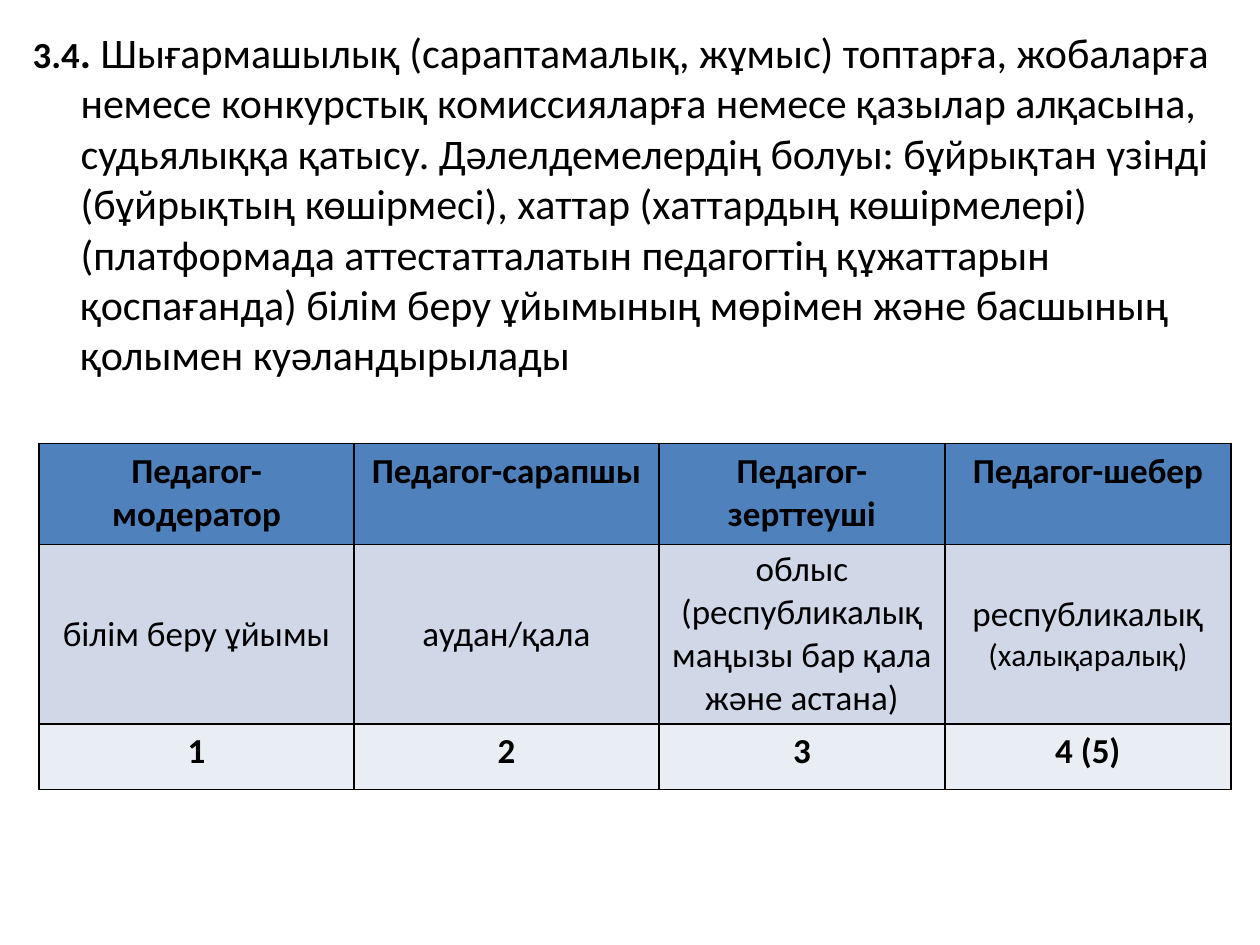
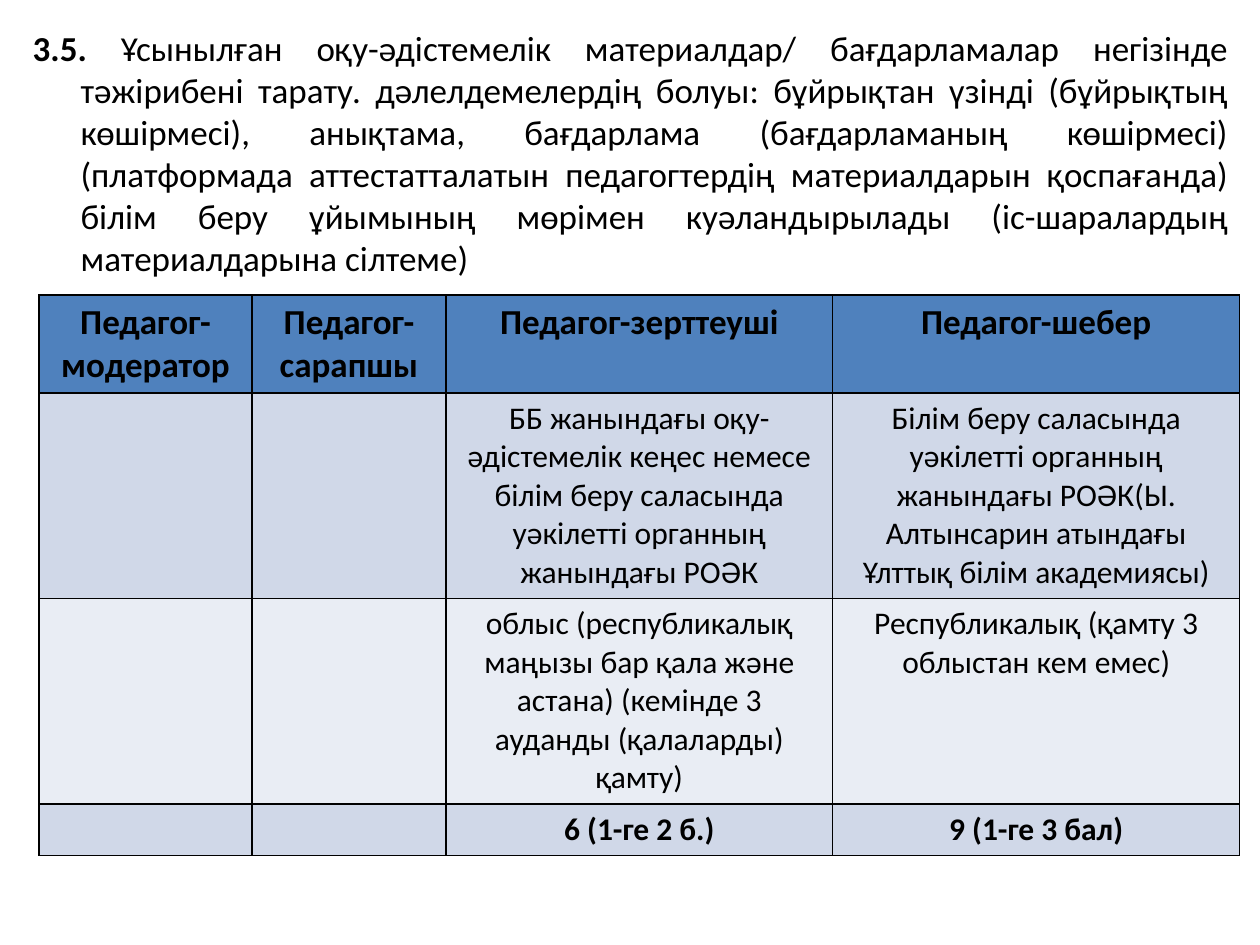
from dataclasses import dataclass
from lxml.etree import SubElement
from pptx import Presentation
from pptx.dml.color import RGBColor
from pptx.enum.text import MSO_ANCHOR as Anchor, MSO_AUTO_SIZE as AutoSize, PP_ALIGN as Align
from pptx.oxml.ns import qn
from pptx.util import Inches, Pt


@dataclass(frozen=True)
class Theme:
    font: str = "Calibri"
    ink: str = "000000"
    paper: str = "FFFFFF"
    header: str = "4F81BD"
    bands: tuple = ("D0D8E8", "E9EDF4")
    lead: int = 24
    number: int = 21
    text: int = 20
    small: int = 18
    border: int = 1


theme = Theme()
deck = Presentation()
deck.slide_width, deck.slide_height = Inches(10), Inches(7.5)
across, down = deck.slide_width / 100, deck.slide_height / 100

ranks = ["Педагог-модератор", "Педагог-сарапшы", "Педагог-зерттеуші", "Педагог-шебер"]

criteria = [
    dict(
        align=Align.LEFT,
        size=theme.lead,
        number=[("3.4", theme.number), (". ", theme.lead)],
        text="Шығармашылық (сараптамалық, жұмыс) топтарға, жобаларға немесе конкурстық "
             "комиссияларға немесе қазылар алқасына, судьялыққа қатысу. Дәлелдемелердің болуы: "
             "бұйрықтан үзінді (бұйрықтың көшірмесі), хаттар (хаттардың көшірмелері) (платформада "
             "аттестатталатын педагогтің құжаттарын қоспағанда) білім беру ұйымының мөрімен және "
             "басшының қолымен куәландырылады",
        top=46.93,
        columns=[25, 24.2, 22.7, 22.7],
        rows=[10.67, 19, 6.93],
        row_sizes=[theme.text, theme.text, theme.text],
        compact_row=1,
        cells=[
            ["білім беру ұйымы", "аудан/қала",
             "облыс (республикалық маңызы бар қала және астана)",
             ("республикалық", " (халықаралық)")],
            ["1", "2", "3", "4 (5)"],
        ],
    ),
    dict(
        align=Align.JUSTIFY,
        size=theme.text,
        number=[("3.5. ", theme.text)],
        text="Ұсынылған оқу-әдістемелік материалдар/ бағдарламалар негізінде тәжірибені тарату. "
             "дәлелдемелердің болуы: бұйрықтан үзінді (бұйрықтың көшірмесі), анықтама, бағдарлама "
             "(бағдарламаның көшірмесі) (платформада аттестатталатын педагогтердің материалдарын "
             "қоспағанда) білім беру ұйымының мөрімен куәландырылады (іс-шаралардың "
             "материалдарына сілтеме)",
        top=31.2,
        columns=[16.9, 15.4, 30.7, 32.3],
        rows=[10.4, 21.73, 21.73, 5.47],
        row_sizes=[theme.text, theme.small, theme.small, theme.small],
        compact_row=3,
        cells=[
            ["", "",
             "ББ жанындағы оқу-әдістемелік кеңес немесе білім беру саласында уәкілетті органның "
             "жанындағы РОӘК",
             "Білім беру саласында уәкілетті органның жанындағы РОӘК(Ы. Алтынсарин атындағы "
             "Ұлттық білім академиясы)"],
            ["", "",
             "облыс (республикалық маңызы бар қала және астана) (кемінде 3 ауданды (қалаларды) "
             "қамту)",
             "Республикалық (қамту 3 облыстан кем емес)"],
            ["", "", "6 (1-ге 2 б.)", "9 (1-ге 3 бал)"],
        ],
    ),
]


def style(font, size, bold):
    font.name, font.size, font.bold = theme.font, Pt(size), bold
    font.color.rgb = RGBColor.from_string(theme.ink)


def outline(cell):
    properties = cell._tc.get_or_add_tcPr()
    for position, side in enumerate(("a:lnL", "a:lnR", "a:lnT", "a:lnB")):
        line = properties.makeelement(qn(side), {"w": str(Pt(theme.border))})
        properties.insert(position, line)
        SubElement(SubElement(line, qn("a:solidFill")), qn("a:srgbClr"), val=theme.ink)


for criterion in criteria:
    page = deck.slides.add_slide(deck.slide_layouts[1])
    page.background.fill.solid()
    page.background.fill.fore_color.rgb = RGBColor.from_string(theme.paper)
    title = page.shapes.title.element
    title.getparent().remove(title)

    body = page.placeholders[1]
    body.left, body.top = int(1.6 * across), int(2.13 * down)
    body.width, body.height = int(96.9 * across), int(94.8 * down)
    body.text_frame.auto_size = AutoSize.NONE
    para = body.text_frame.paragraphs[0]
    para.alignment = criterion["align"]
    indent = para._p.get_or_add_pPr()
    indent.set("marL", str(Inches(0.38)))
    indent.set("indent", str(-Inches(0.38)))
    SubElement(indent, qn("a:buNone"))
    pieces = [(words, size, True) for words, size in criterion["number"]]
    for words, size, bold in pieces + [(criterion["text"], criterion["size"], False)]:
        span = para.add_run()
        span.text = words
        style(span.font, size, bold)

    columns, rows = criterion["columns"], criterion["rows"]
    table = page.shapes.add_table(
        len(rows), len(columns), int(3.1 * across), int(criterion["top"] * down),
        int(sum(columns) * across), int(sum(rows) * down)).table
    table.first_row = table.horz_banding = False
    for column, share in zip(table.columns, columns):
        column.width = int(share * across)
    for row, share in zip(table.rows, rows):
        row.height = int(share * down)

    for index, texts in enumerate([ranks] + criterion["cells"]):
        band = theme.bands[(index - 1) % 2] if index else theme.header
        bold = index in (0, len(rows) - 1)
        for cell, words in zip(table.rows[index].cells, texts):
            cell.fill.solid()
            cell.fill.fore_color.rgb = RGBColor.from_string(band)
            outline(cell)
            para = cell.text_frame.paragraphs[0]
            para.alignment = Align.CENTER
            style(para.font, criterion["row_sizes"][index], bold)
            if index == criterion["compact_row"] and words:
                cell.vertical_anchor = Anchor.MIDDLE
                cell.margin_left = cell.margin_right = Inches(0.05)
                cell.margin_top = cell.margin_bottom = Inches(0.03)
            if isinstance(words, tuple):
                for part, size in zip(words, (theme.text, theme.small)):
                    span = para.add_run()
                    span.text = part
                    span.font.size = Pt(size)
            elif words:
                para.add_run().text = words

deck.save("out.pptx")
